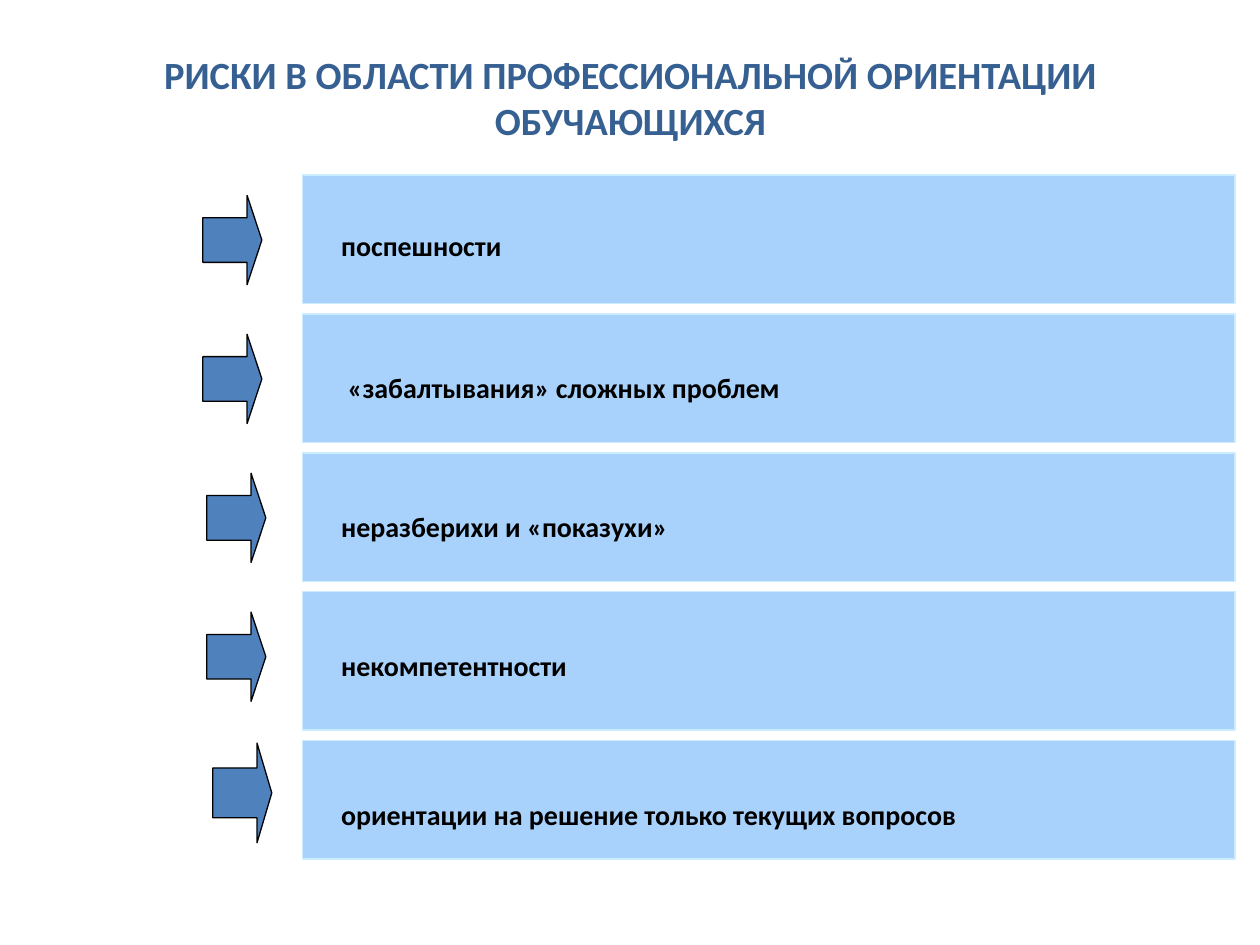
"""Slide listing the risks in career guidance, each pointed at by an arrow."""
from dataclasses import dataclass

import pptx
import pptx.dml.color
import pptx.enum.shapes
import pptx.enum.text
import pptx.util
from pptx.util import Cm

Shape = pptx.enum.shapes.MSO_SHAPE
Align = pptx.enum.text.PP_ALIGN
Anchor = pptx.enum.text.MSO_ANCHOR

FIRST_TOP = 3.53
GAP = 0.21


@dataclass(frozen=True)
class Risk:
    text: str
    bar_height: float = 2.59
    text_height: float = 1.75
    arrow_left: float = 4.09
    arrow_drop: float = 0.41
    arrow_height: float = 1.8


RISKS = [
    Risk("поспешности", text_height=1.68),
    Risk(" «забалтывания» сложных проблем"),
    Risk("неразберихи и «показухи»", arrow_left=4.17),
    Risk("некомпетентности", bar_height=2.79, arrow_left=4.17),
    Risk("ориентации на решение только текущих вопросов", bar_height=2.39,
         arrow_left=4.29, arrow_drop=0.05, arrow_height=2.01),
]


def paint(color_format, hex_color: str) -> None:
    color_format.rgb = pptx.dml.color.RGBColor.from_string(hex_color)


def add_figure(page, kind, left: float, top: float, width: float,
               height: float, fill: str, line: str):
    figure = page.shapes.add_shape(kind, Cm(left), Cm(top), Cm(width), Cm(height))
    figure.shadow.inherit = False
    figure.fill.solid()
    paint(figure.fill.fore_color, fill)
    paint(figure.line.color, line)
    figure.line.width = pptx.util.Pt(0.75)
    return figure


def add_text(page, text: str, left: float, top: float, width: float, height: float,
             size: int, color: str, align, anchor) -> None:
    box = page.shapes.add_textbox(Cm(left), Cm(top), Cm(width), Cm(height))
    frame = box.text_frame
    frame.word_wrap = True
    frame.vertical_anchor = anchor
    para = frame.paragraphs[0]
    para.text = text
    para.alignment = align
    para.font.name = "Calibri"
    para.font.size = pptx.util.Pt(size)
    para.font.bold = True
    paint(para.font.color, color)


def add_risk(page, risk: Risk, top: float) -> None:
    add_figure(page, Shape.RECTANGLE, 6.1, top, 18.8, risk.bar_height,
               "A8D2FC", "CCECFF")
    add_text(page, risk.text, 6.63, top + 0.2, 17.27, risk.text_height,
             16, "000000", Align.LEFT, Anchor.BOTTOM)
    arrow = add_figure(page, Shape.RIGHT_ARROW, risk.arrow_left, top + risk.arrow_drop,
                       1.19, risk.arrow_height, "4F81BD", "000000")
    arrow.adjustments[0] = 0.5
    arrow.adjustments[1] = 0.25


def main() -> None:
    deck = pptx.Presentation()
    deck.slide_width, deck.slide_height = Cm(25.4), Cm(19.05)
    page = deck.slides.add_slide(deck.slide_layouts[6])
    add_text(page, "РИСКИ В ОБЛАСТИ ПРОФЕССИОНАЛЬНОЙ ОРИЕНТАЦИИ ОБУЧАЮЩИХСЯ",
             1.09, 0.91, 23.24, 2.13, 22, "376092", Align.CENTER, Anchor.TOP)
    top = FIRST_TOP
    for risk in RISKS:
        add_risk(page, risk, top)
        top += risk.bar_height + GAP
    deck.save("out.pptx")


if __name__ == "__main__":
    main()
